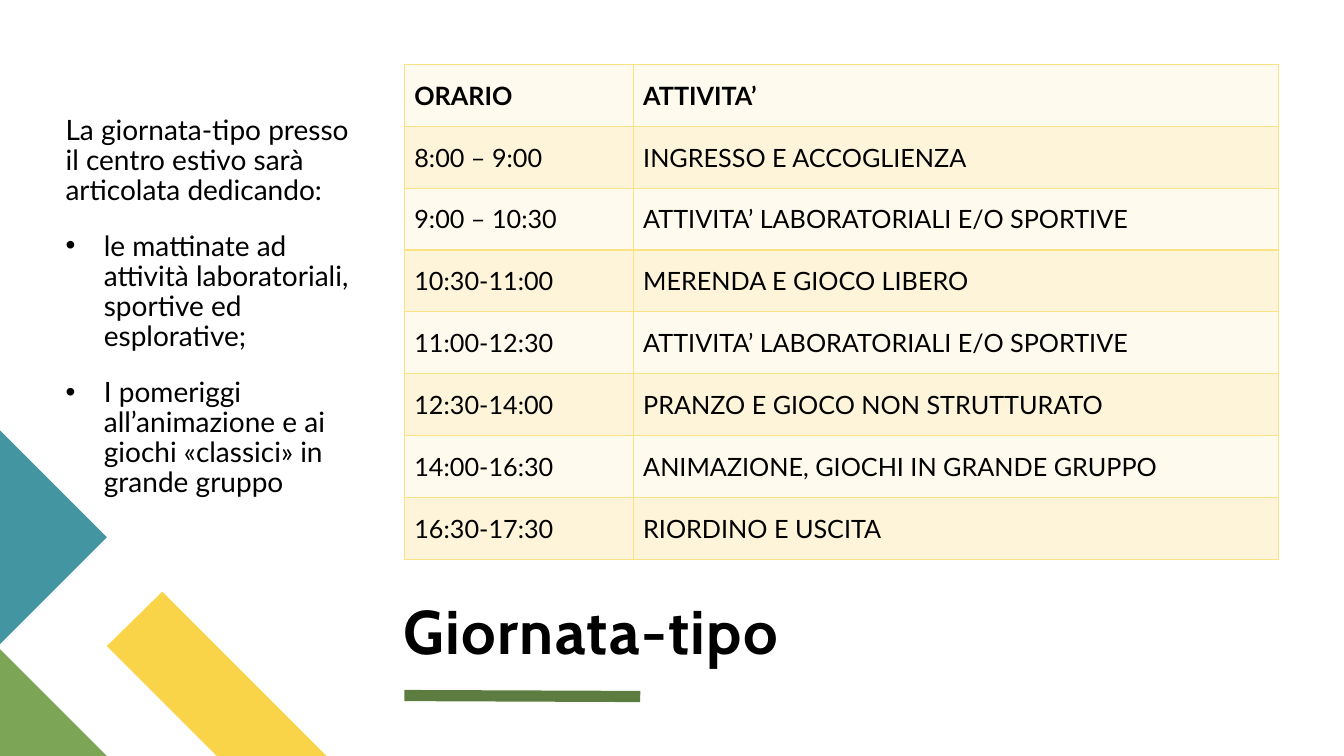
"""Build the slide with the typical day of a summer camp."""
from pptx import Presentation
from pptx.dml.color import RGBColor
from pptx.enum.shapes import MSO_CONNECTOR
from pptx.enum.text import MSO_ANCHOR as Anchor
from pptx.oxml.ns import qn
from pptx.util import Pt
from lxml.etree import SubElement

PX = 9144
SLIDE_SIZE = (1333, 750)
COLORS = {
    "text": "000000",
    "yellow": "F9D448",
    "green": "7CA655",
    "teal": "4495A2",
    "underline": "5D7D40",
    "border": "FBE284",
    "row_light": "FEFAED",
    "row_dark": "FDF4D9",
}
DECORATIONS = [
    ("yellow", [(324, 750), (215, 750), (106, 641), (161, 587)]),
    ("green", [(106, 750), (0, 750), (0, 644)]),
    ("teal", [(0, 427), (106, 533), (0, 639)]),
]
UNDERLINE = (401, 690, 635, 691)
TITLE = "Giornata-tipo"
TITLE_BOX = (400, 510, 868, 151)
INTRO = "La giornata-tipo presso il centro estivo sarà articolata dedicando:"
BULLETS = [
    "le mattinate ad attività laboratoriali, sportive ed esplorative;",
    "I pomeriggi all’animazione e ai giochi «classici» in grande gruppo",
]
BODY_BOX = (65, 85, 309, 437)
BULLET_INDENT = 38
SCHEDULE = [
    ("ORARIO", "ATTIVITA’"),
    ("8:00 – 9:00", "INGRESSO E ACCOGLIENZA"),
    ("9:00 – 10:30", "ATTIVITA’ LABORATORIALI E/O SPORTIVE"),
    ("10:30-11:00", "MERENDA E GIOCO LIBERO"),
    ("11:00-12:30", "ATTIVITA’ LABORATORIALI E/O SPORTIVE"),
    ("12:30-14:00", "PRANZO E GIOCO NON STRUTTURATO"),
    ("14:00-16:30", "ANIMAZIONE, GIOCHI IN GRANDE GRUPPO"),
    ("16:30-17:30", "RIORDINO E USCITA"),
]
TABLE_BOX = (401, 64, 867, 491)
COLUMN_WIDTHS = (227, 640)


def emu(lengths):
    return [length * PX for length in lengths]


def color(name):
    return RGBColor.from_string(COLORS[name])


def add_run(paragraph, text, font_name, size, bold=False):
    run = paragraph.add_run()
    run.text = text
    run.font.name = font_name
    run.font.size = Pt(size)
    run.font.bold = bold
    run.font.color.rgb = color("text")
    return run


def add_text_frame(slide, box, margins, anchor):
    frame = slide.shapes.add_textbox(*emu(box)).text_frame
    frame.word_wrap = True
    frame.vertical_anchor = anchor
    (frame.margin_left, frame.margin_top,
     frame.margin_right, frame.margin_bottom) = emu(margins)
    return frame


def add_decorations(slide):
    for name, points in DECORATIONS:
        builder = slide.shapes.build_freeform(*points[0], scale=PX)
        builder.add_line_segments(points[1:], close=True)
        shape = builder.convert_to_shape()
        shape.shadow.inherit = False
        shape.fill.solid()
        shape.fill.fore_color.rgb = color(name)
        shape.line.fill.background()
    line = slide.shapes.add_connector(MSO_CONNECTOR.STRAIGHT, *emu(UNDERLINE))
    line.line.color.rgb = color("underline")
    line.line.width = Pt(8)
    SubElement(line._element.spPr, qn("a:effectLst"))


def add_title(slide):
    frame = add_text_frame(slide, TITLE_BOX, (0, 0, 0, 0), Anchor.BOTTOM)
    paragraph = frame.paragraphs[0]
    paragraph.line_spacing = 0.8
    run = add_run(paragraph, TITLE, "Cabin", 44, True)
    run._r.get_or_add_rPr().set("spc", "100")


def add_body(slide):
    frame = add_text_frame(slide, BODY_BOX, (0, 30, 10, 5), Anchor.TOP)
    paragraph = frame.paragraphs[0]
    paragraph.line_spacing = 0.9
    add_run(paragraph, INTRO, "Lato", 20)
    for text in BULLETS:
        paragraph = frame.add_paragraph()
        properties = paragraph._p.get_or_add_pPr()
        properties.set("marL", str(BULLET_INDENT * PX))
        properties.set("indent", str(-BULLET_INDENT * PX))
        SubElement(properties, qn("a:buFont"), typeface="Arial")
        SubElement(properties, qn("a:buChar"), char="•")
        paragraph.line_spacing = 0.9
        paragraph.space_before = Pt(18)
        add_run(paragraph, text, "Lato", 20)


def add_borders(cell):
    properties = cell._tc.get_or_add_tcPr()
    for side in ("lnL", "lnR", "lnT", "lnB"):
        border = SubElement(properties, qn(f"a:{side}"), w=str(Pt(1)))
        fill = SubElement(border, qn("a:solidFill"))
        SubElement(fill, qn("a:srgbClr"), val=COLORS["border"])


def add_schedule(slide):
    table = slide.shapes.add_table(
        len(SCHEDULE), len(COLUMN_WIDTHS), *emu(TABLE_BOX)).table
    table.first_row = table.horz_banding = False
    for column, width in zip(table.columns, COLUMN_WIDTHS):
        column.width = width * PX
    for row_index, texts in enumerate(SCHEDULE):
        table.rows[row_index].height = TABLE_BOX[3] * PX // len(SCHEDULE)
        for column_index, text in enumerate(texts):
            cell = table.cell(row_index, column_index)
            add_borders(cell)
            cell.fill.solid()
            cell.fill.fore_color.rgb = color(
                "row_dark" if row_index % 2 else "row_light")
            cell.vertical_anchor = Anchor.MIDDLE
            add_run(cell.text_frame.paragraphs[0], text, "Lato", 18,
                    row_index == 0)


def main():
    presentation = Presentation()
    presentation.slide_width, presentation.slide_height = emu(SLIDE_SIZE)
    slide = presentation.slides.add_slide(presentation.slide_layouts[6])
    add_decorations(slide)
    add_title(slide)
    add_body(slide)
    add_schedule(slide)
    presentation.save("out.pptx")


if __name__ == "__main__":
    main()
